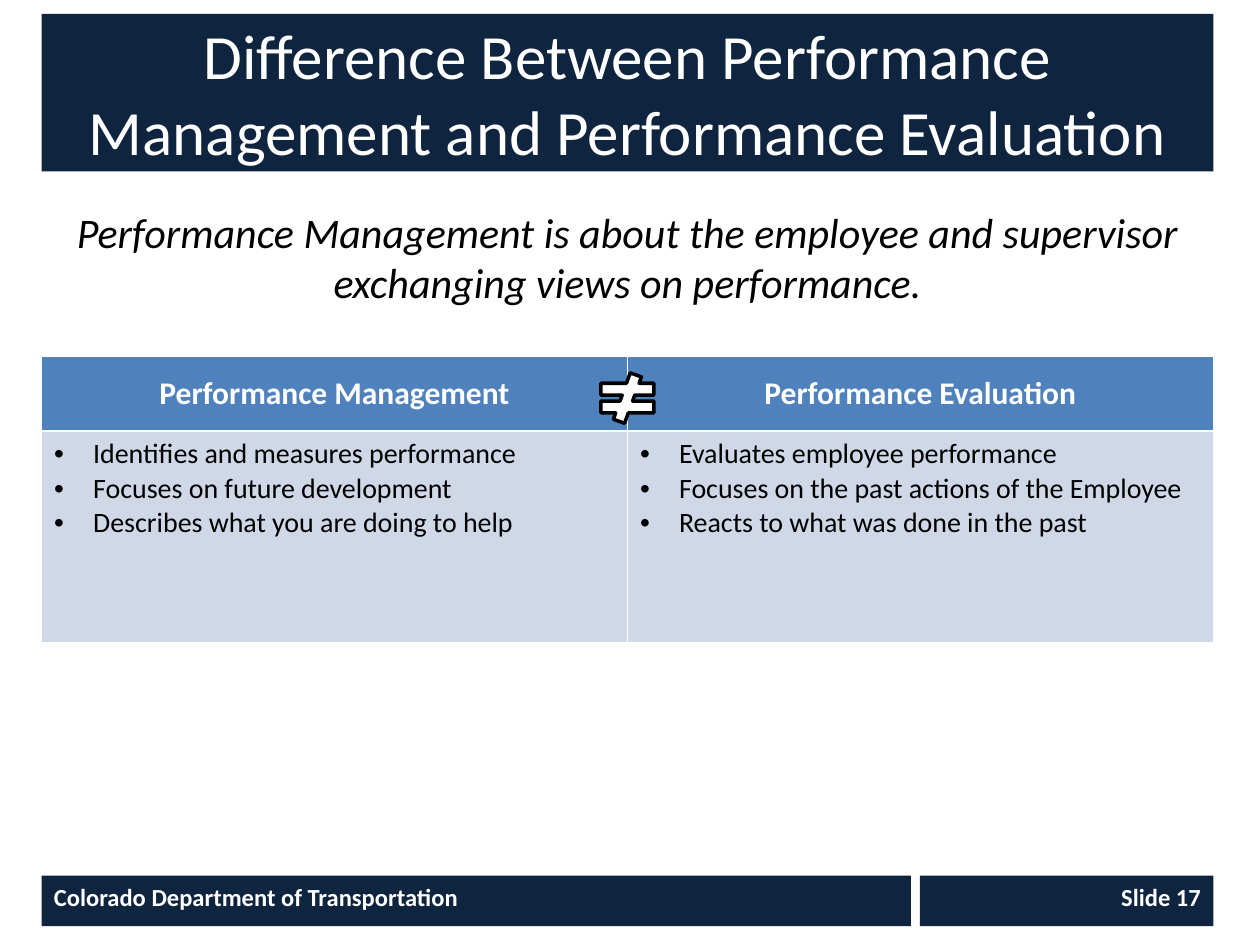
from dataclasses import dataclass

from lxml.etree import SubElement
from pptx import Presentation
from pptx.dml.color import RGBColor
from pptx.enum.shapes import MSO_SHAPE
from pptx.enum.text import MSO_ANCHOR, MSO_AUTO_SIZE, PP_ALIGN
from pptx.oxml.ns import qn
from pptx.util import Inches, Pt

TITLE = "Difference Between Performance Management and Performance Evaluation"
STATEMENT = ("Performance Management is about the employee and supervisor "
             "exchanging views on performance.")
COMPARISON = {
    "Performance Management": [
        "Identifies and measures performance",
        "Focuses on future development",
        "Describes what you are doing to help",
    ],
    "Performance Evaluation": [
        "Evaluates employee performance",
        "Focuses on the past actions of the Employee",
        "Reacts to what was done in the past",
    ],
}
FOOTER = [  # text, width, alignment
    ("Colorado Department of Transportation", 6.9, PP_ALIGN.LEFT),
    ("Slide 17", 2.33, PP_ALIGN.RIGHT),
]


@dataclass(frozen=True)
class Theme:
    font: str = "Calibri"
    navy: RGBColor = RGBColor(0x0F, 0x24, 0x3E)
    blue: RGBColor = RGBColor(0x4F, 0x81, 0xBD)
    pale: RGBColor = RGBColor(0xD0, 0xD8, 0xE8)
    white: RGBColor = RGBColor(0xFF, 0xFF, 0xFF)
    black: RGBColor = RGBColor(0, 0, 0)
    title: int = 36
    statement: int = 24
    heading: int = 18
    bullet: int = 16
    footer: int = 14


THEME = Theme()
LEFT, WIDTH = 0.33, 9.3
TABLE_TOP, ROW_HEIGHTS = 2.83, (0.59, 1.68)
FOOTER_TOP, FOOTER_HEIGHT = 6.95, 0.4
SIGN_WIDTH, SIGN_HEIGHT = 0.57, 0.4
INDENT = 0.31


def box(left, top, width, height):
    return [Inches(length) for length in (left, top, width, height)]


def paint(target, color):
    target.fill.solid()
    target.fill.fore_color.rgb = color


def write(frame, lines, size, color, align=PP_ALIGN.LEFT, bold=False, italic=False):
    frame.text = "\n".join(lines)
    for paragraph in frame.paragraphs:
        paragraph.alignment = align
        font = paragraph.font
        font.name, font.size, font.color.rgb = THEME.font, Pt(size), color
        font.bold, font.italic = bold, italic


def add_bullet(paragraph):
    properties = paragraph._p.get_or_add_pPr()
    properties.set("marL", str(Inches(INDENT)))
    properties.set("indent", str(-Inches(INDENT)))
    bullet_font = SubElement(properties, qn("a:buFont"))
    bullet_font.set("typeface", "Arial")
    SubElement(properties, qn("a:buChar")).set("char", "•")


def add_comparison(slide):
    frame = slide.shapes.add_table(2, len(COMPARISON),
                                   *box(LEFT, TABLE_TOP, WIDTH, sum(ROW_HEIGHTS)))
    table = frame.table
    for row, height in zip(table.rows, ROW_HEIGHTS):
        row.height = Inches(height)
    for column, (heading, points) in enumerate(COMPARISON.items()):
        header, body = table.cell(0, column), table.cell(1, column)
        paint(header, THEME.blue)
        header.vertical_anchor = MSO_ANCHOR.MIDDLE
        write(header.text_frame, [heading], THEME.heading, THEME.white,
              PP_ALIGN.CENTER, bold=True)
        paint(body, THEME.pale)
        write(body.text_frame, points, THEME.bullet, THEME.black)
        for paragraph in body.text_frame.paragraphs:
            add_bullet(paragraph)


def add_title(slide):
    title = slide.shapes.title
    title.left, title.top, title.width, title.height = box(LEFT, 0.11, WIDTH, 1.25)
    paint(title, THEME.navy)
    title.text_frame.auto_size = MSO_AUTO_SIZE.NONE
    title.text_frame.vertical_anchor = MSO_ANCHOR.MIDDLE
    write(title.text_frame, [TITLE], THEME.title, THEME.white, PP_ALIGN.CENTER)


def add_statement(slide):
    frame = slide.shapes.add_textbox(*box(LEFT, 1.59, WIDTH, 0.83)).text_frame
    frame.word_wrap = True
    write(frame, [STATEMENT], THEME.statement, THEME.black, PP_ALIGN.CENTER, italic=True)
    frame.paragraphs[0].space_before = Pt(0.2 * THEME.statement)


def add_footer(slide):
    gap = WIDTH - sum(width for _, width, _ in FOOTER)
    left = LEFT
    for text, width, align in FOOTER:
        bar = slide.shapes.add_shape(MSO_SHAPE.RECTANGLE,
                                     *box(left, FOOTER_TOP, width, FOOTER_HEIGHT))
        bar.shadow.inherit = False
        paint(bar, THEME.navy)
        bar.line.fill.background()
        bar.text_frame.vertical_anchor = MSO_ANCHOR.TOP
        write(bar.text_frame, [text], THEME.footer, THEME.white, align, bold=True)
        left += width + gap


def add_not_equal_sign(slide):
    """Place the sign on the line between the two column headings."""
    sign = slide.shapes.add_shape(
        MSO_SHAPE.MATH_NOT_EQUAL,
        *box(LEFT + (WIDTH - SIGN_WIDTH) / 2, 2.96, SIGN_WIDTH, SIGN_HEIGHT))
    sign.shadow.inherit = False
    paint(sign, THEME.white)
    sign.line.color.rgb = THEME.black
    sign.line.width = Pt(2)


def main():
    presentation = Presentation()
    presentation.slide_width, presentation.slide_height = Inches(10), Inches(7.5)
    slide = presentation.slides.add_slide(presentation.slide_layouts[5])
    add_title(slide)
    add_statement(slide)
    add_comparison(slide)
    add_not_equal_sign(slide)
    add_footer(slide)
    presentation.save("out.pptx")


if __name__ == "__main__":
    main()
